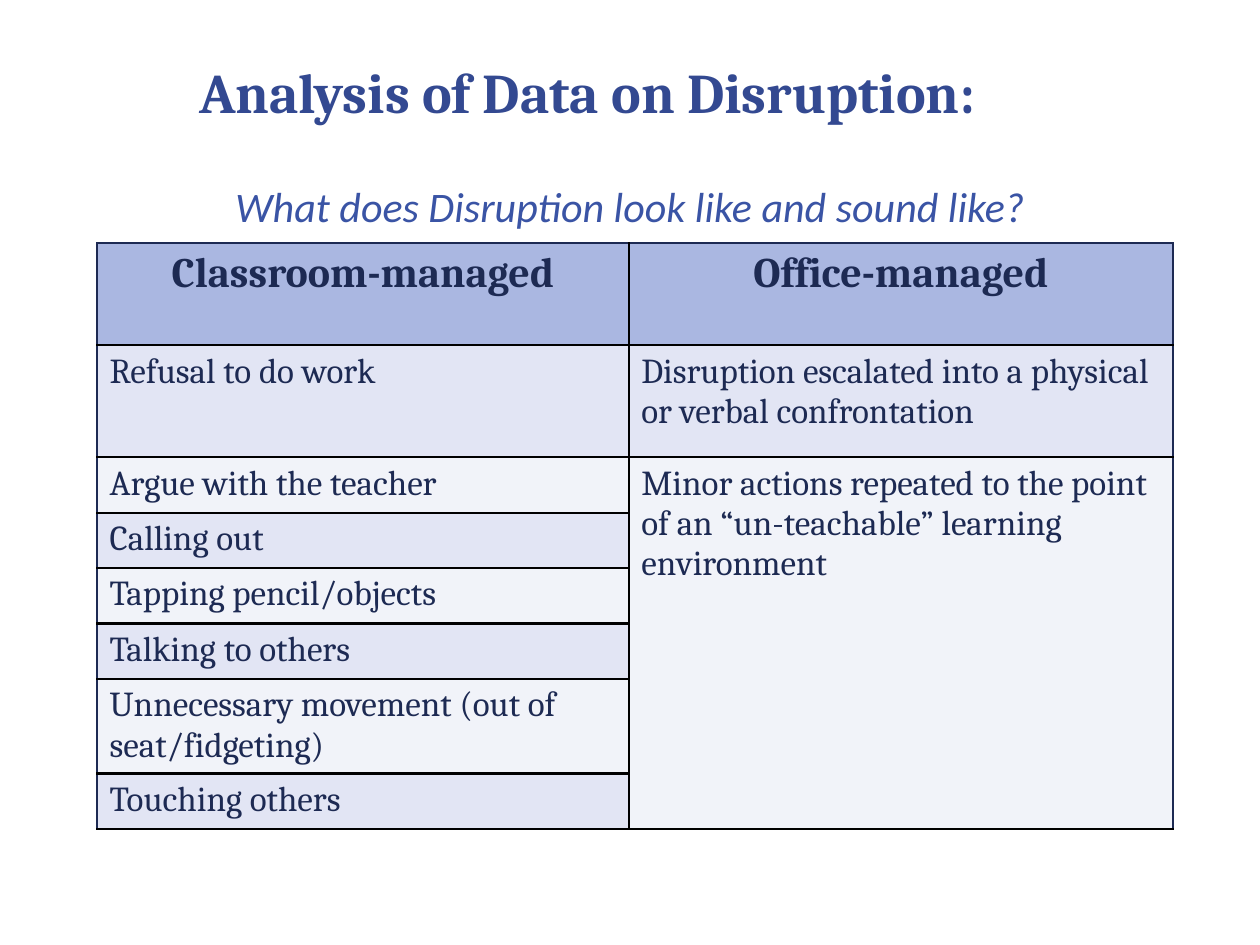
from dataclasses import dataclass

from lxml.etree import SubElement
from pptx import Presentation
from pptx.dml.color import RGBColor as Color
from pptx.enum.text import MSO_ANCHOR as Anchor, PP_ALIGN as Align
from pptx.oxml.ns import qn
from pptx.util import Inches, Pt

TITLE = "Analysis of Data on Disruption:"
QUESTION = "What does Disruption look like and sound like?"
HEADERS = ["Classroom-managed", "Office-managed"]
CLASSROOM = [
    "Refusal to do work",
    "Argue with the teacher",
    "Calling out",
    "Tapping pencil/objects",
    "Talking to others",
    "Unnecessary movement (out of seat/fidgeting)",
    "Touching others",
]
OFFICE = [
    "Disruption escalated into a physical or verbal confrontation",
    "Minor actions repeated to the point of an “un-teachable” learning environment",
]
COLUMN_WIDTHS = [4.22, 4.32]
LINE_ROW = 0.44
ROW_HEIGHTS = [0.81, 0.89] + [LINE_ROW] * 4 + [0.75, LINE_ROW]
TABLE_LEFT, TABLE_TOP = 0.77, 1.93


@dataclass(frozen=True)
class Theme:
    serif: str = "Cambria"
    sans: str = "Calibri"
    title: str = "334991"
    question: str = "3A54A5"
    ink: str = "1D2A53"
    header: str = "AAB7E1"
    bands: tuple = ("E2E5F4", "F1F3F9")
    grid: str = "000000"
    title_size: int = 32
    heading_size: int = 24
    body_size: int = 20
    edge_width: float = 1
    grid_width: float = 1.5


THEME = Theme()


def write(frame, text, face, size, color, bold=False, italic=False, align=Align.LEFT):
    frame.text = text
    frame.word_wrap = True
    para = frame.paragraphs[0]
    para.alignment = align
    font = para.runs[0].font
    font.name, font.size = face, Pt(size)
    font.bold, font.italic = bold, italic
    font.color.rgb = Color.from_string(color)


def add_borders(cell, outer_sides):
    properties = cell._tc.get_or_add_tcPr()
    for side in "LRTB":
        outer = side in outer_sides
        width = THEME.edge_width if outer else THEME.grid_width
        line = SubElement(properties, qn(f"a:ln{side}"), w=str(Pt(width)))
        fill = SubElement(line, qn("a:solidFill"))
        SubElement(fill, qn("a:srgbClr"), val=THEME.ink if outer else THEME.grid)


def add_table(page):
    rows, columns = len(ROW_HEIGHTS), len(COLUMN_WIDTHS)
    table = page.shapes.add_table(
        rows, columns, Inches(TABLE_LEFT), Inches(TABLE_TOP),
        Inches(sum(COLUMN_WIDTHS)), Inches(sum(ROW_HEIGHTS)),
    ).table
    for column, width in zip(table.columns, COLUMN_WIDTHS):
        column.width = Inches(width)
    for row, height in zip(table.rows, ROW_HEIGHTS):
        row.height = Inches(height)

    last_office_row = len(OFFICE)
    table.cell(last_office_row, 1).merge(table.cell(rows - 1, 1))
    for column, (header, entries) in enumerate(zip(HEADERS, [CLASSROOM, OFFICE])):
        texts = [header] + entries
        for row in range(rows):
            cell = table.cell(row, column)
            add_borders(cell, "LR"[column] + ("T" if row == 0 else ""))
            band_row = min(row, len(entries))
            shade = THEME.bands[(band_row - 1) % 2] if row else THEME.header
            cell.fill.solid()
            cell.fill.fore_color.rgb = Color.from_string(shade)
            if row < len(texts):
                size = THEME.body_size if row else THEME.heading_size
                align = Align.LEFT if row else Align.CENTER
                write(cell.text_frame, texts[row], THEME.serif, size, THEME.ink,
                      bold=row == 0, align=align)


def main():
    deck = Presentation()
    deck.slide_width, deck.slide_height = Inches(10), Inches(7.5)
    page = deck.slides.add_slide(deck.slide_layouts[5])

    add_table(page)

    question = page.shapes.add_textbox(Inches(1.77), Inches(1.38), Inches(6.54), Inches(0.5))
    write(question.text_frame, QUESTION, THEME.sans, THEME.heading_size,
          THEME.question, italic=True)

    title = page.shapes.title
    title.left, title.top = Inches(1.48), Inches(0.34)
    title.width, title.height = Inches(7.36), Inches(0.76)
    title.text_frame.vertical_anchor = Anchor.MIDDLE
    write(title.text_frame, TITLE, THEME.serif, THEME.title_size, THEME.title, bold=True)

    deck.save("out.pptx")


if __name__ == "__main__":
    main()
